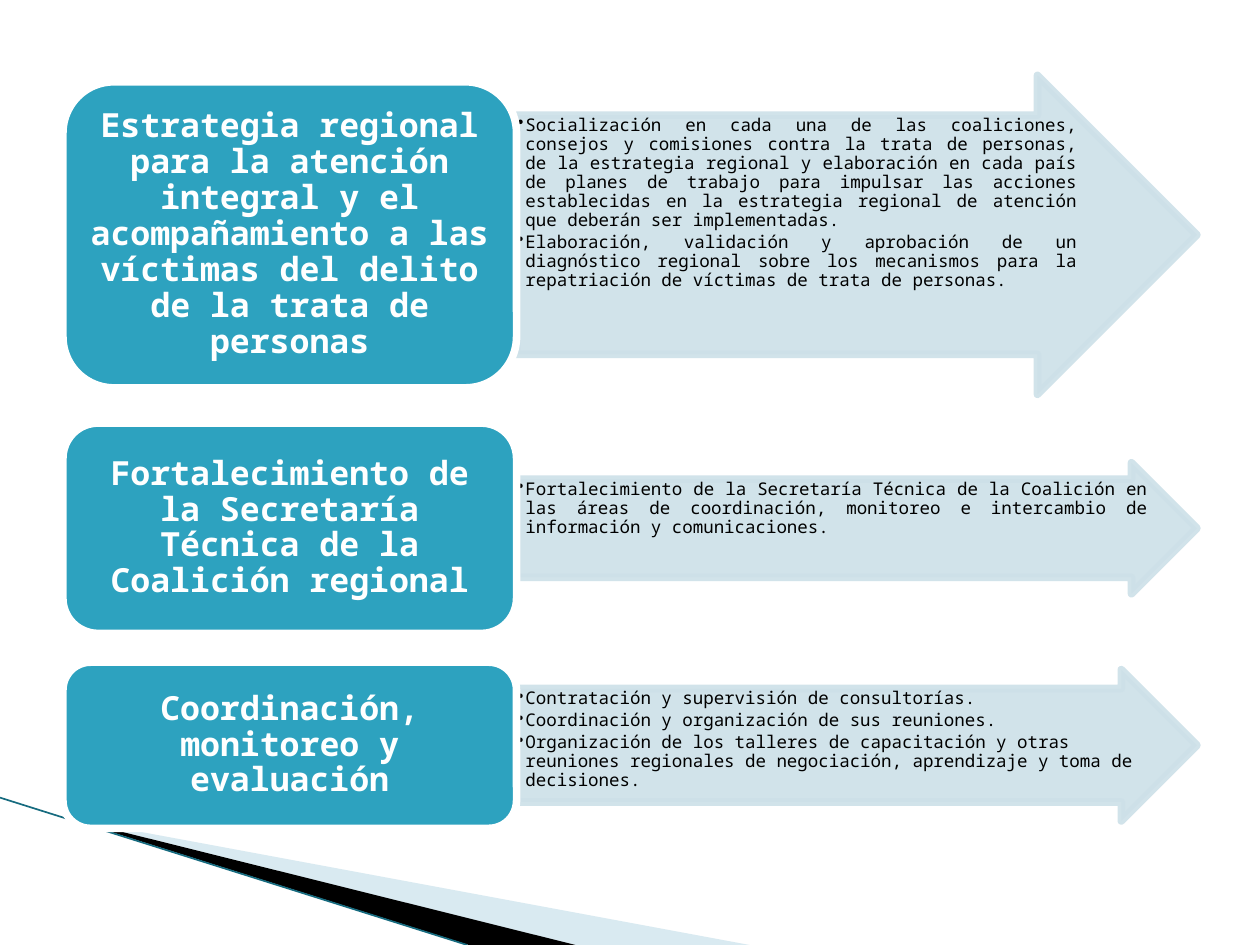
from lxml import etree
from pptx import Presentation
from pptx.dml.color import RGBColor
from pptx.enum.shapes import MSO_CONNECTOR, MSO_SHAPE
from pptx.enum.text import MSO_ANCHOR, PP_ALIGN
from pptx.oxml.ns import qn
from pptx.util import Cm, Pt

ROUND = MSO_SHAPE.ROUNDED_RECTANGLE
ARROW = MSO_SHAPE.RIGHT_ARROW
STRAIGHT = MSO_CONNECTOR.STRAIGHT
TOP, MIDDLE = MSO_ANCHOR.TOP, MSO_ANCHOR.MIDDLE
LEFT, CENTER, JUSTIFY = PP_ALIGN.LEFT, PP_ALIGN.CENTER, PP_ALIGN.JUSTIFY

TEAL = RGBColor(0x2D, 0xA2, 0xBF)
DARK = RGBColor(0x16, 0x6B, 0x7F)
PALE = RGBColor(0xCD, 0xE0, 0xE8)
SKY = RGBColor(0xA0, 0xCB, 0xDC)
WHITE = RGBColor(0xFF, 0xFF, 0xFF)
BLACK = RGBColor(0x00, 0x00, 0x00)
FONT = "Noto Sans Mono"
EDGE = 4.33
GAP = 0.58

ROWS = [
    (6.17, 6.43, JUSTIFY,
     "Estrategia regional para la atención integral y el acompañamiento a las "
     "víctimas del delito de la trata de personas",
     ["Socialización en cada una de las coaliciones, consejos y comisiones contra "
      "la trata de personas, de la estrategia regional y elaboración en cada país "
      "de planes de trabajo para impulsar las acciones establecidas en la "
      "estrategia regional de atención que deberán ser implementadas.",
      "Elaboración, validación y aprobación de un diagnóstico regional sobre los "
      "mecanismos para la repatriación de víctimas de trata de personas."]),
    (4.24, 2.64, JUSTIFY,
     "Fortalecimiento de la Secretaría Técnica de la Coalición regional",
     ["Fortalecimiento de la Secretaría Técnica de la Coalición en las áreas de "
      "coordinación, monitoreo e intercambio de información y comunicaciones."]),
    (3.35, 3.05, LEFT,
     "Coordinación, monitoreo y evaluación",
     ["Contratación y supervisión de consultorías.",
      "Coordinación y organización de sus reuniones.",
      "Organización de los talleres de capacitación y otras reuniones regionales "
      "de negociación, aprendizaje y toma de decisiones."]),
]


def fade(shape, share):
    """Set the opacity of every colour in a shape to a percentage."""
    for color in shape._element.spPr.iter(qn("a:srgbClr")):
        etree.SubElement(color, qn("a:alpha")).set("val", str(share * 1000))


def paint(shape, fill, line=None):
    """Give a shape a flat fill and an optional outline."""
    shape.shadow.inherit = False
    shape.fill.solid()
    shape.fill.fore_color.rgb = fill
    if line is None:
        shape.line.fill.background()
    else:
        shape.line.color.rgb = line
        shape.line.width = Pt(EDGE)


def bullet(para):
    """Add a hanging bullet to a paragraph."""
    props = para._p.get_or_add_pPr()
    props.set("marL", str(Cm(0.16)))
    props.set("indent", str(-Cm(0.16)))
    etree.SubElement(props, qn("a:buChar")).set("char", "•")


def write(shape, lines, size, color, align, anchor, pad, bold=False, dots=False):
    """Fill a shape with formatted paragraphs."""
    frame = shape.text_frame
    frame.word_wrap = True
    frame.vertical_anchor = anchor
    frame.margin_left = frame.margin_right = Cm(pad[0])
    frame.margin_top = frame.margin_bottom = Cm(pad[1])
    frame.text = "\n".join(lines)
    for para in frame.paragraphs:
        para.alignment = align
        para.line_spacing = 0.9
        if dots:
            para.level = 1
            para.space_after = Pt(1.8)
            bullet(para)
        for run in para.runs:
            run.font.name = FONT
            run.font.size = Pt(size)
            run.font.bold = bold
            run.font.color.rgb = color


def wedge(slide, points, fill):
    """Draw a closed polygon from points in centimetres."""
    spots = [(Cm(x), Cm(y)) for x, y in points]
    pen = slide.shapes.build_freeform(*spots[0])
    pen.add_line_segments(spots[1:], close=True)
    shape = pen.convert_to_shape()
    paint(shape, fill)
    return shape


def corner(slide, left, top, base):
    """Draw the slanted bands in the lower left corner."""
    start = (left + 1.38, top + 0.42)
    pale = wedge(slide, [start, (left + 15.11, base), (left + 11.58, base)], SKY)
    fade(pale, 40)
    wedge(slide, [start, (left + 11.6, base), (left + 9.45, base)], BLACK)
    line = slide.shapes.add_connector(
        STRAIGHT, Cm(left), Cm(top), Cm(left + 9.42), Cm(base))
    line.line.color.rgb = DARK
    line.line.width = Pt(0.95)
    etree.SubElement(line._element.spPr, qn("a:effectLst"))


def band(slide, left, top, width, row):
    """Draw one title box with its arrow and return the height used."""
    tall, high, align, title, notes = row
    full = max(tall, high)
    part = width * 0.4
    arrow = slide.shapes.add_shape(
        ARROW, Cm(left + part), Cm(top + (full - high) / 2),
        Cm(width - part), Cm(high))
    arrow.adjustments[0] = 0.75
    arrow.adjustments[1] = 0.5
    paint(arrow, PALE, PALE)
    fade(arrow, 90)
    write(arrow, notes, 10, BLACK, align, TOP, (0.02, 0.02), dots=True)
    box = slide.shapes.add_shape(
        ROUND, Cm(left), Cm(top + (full - tall) / 2), Cm(part), Cm(tall))
    paint(box, TEAL, WHITE)
    write(box, [title], 19, WHITE, CENTER, MIDDLE, (0.2, 0.1), bold=True)
    return full


def main():
    """Build the slide and save it."""
    deck = Presentation()
    deck.slide_width, deck.slide_height = Cm(25.4), Cm(19.05)
    slide = deck.slides.add_slide(deck.slide_layouts[6])
    corner(slide, 0, 16.08, 19.05)
    top = 1.52
    for row in ROWS:
        top += band(slide, 1.27, top, 22.86, row) + GAP
    deck.save("out.pptx")


if __name__ == "__main__":
    main()
